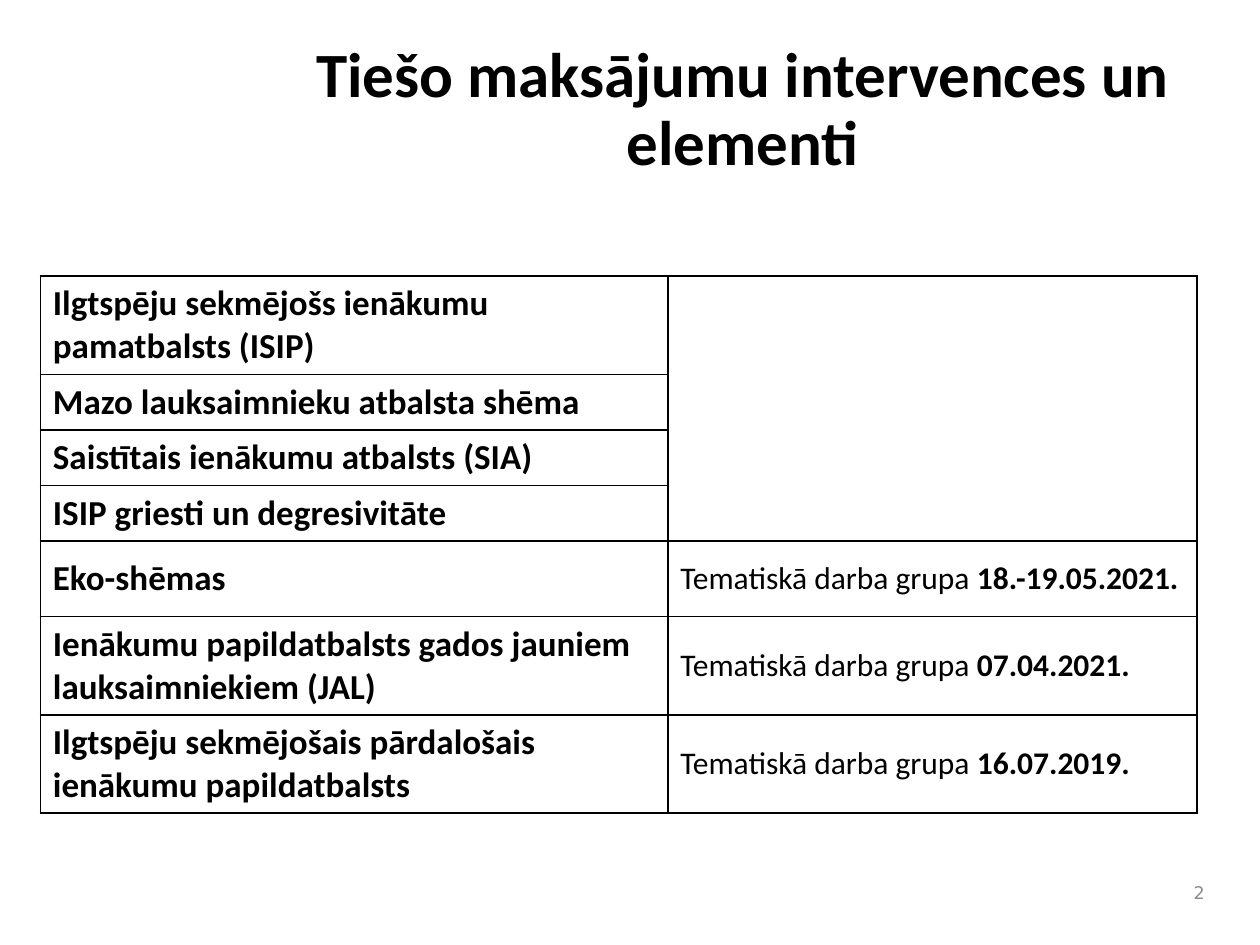
import pptx
import pptx.util
import pptx.dml.color
import pptx.enum.text
import pptx.oxml
import pptx.oxml.ns
from dataclasses import dataclass

Inches, Pt = pptx.util.Inches, pptx.util.Pt
ALIGN = pptx.enum.text.PP_ALIGN
MIDDLE = pptx.enum.text.MSO_ANCHOR.MIDDLE


@dataclass(frozen=True)
class Theme:
    """Colours, fonts and type sizes."""
    ink: str = "000000"
    muted: str = "8C8C8C"
    body: str = "Calibri"
    digit: str = "DejaVu Sans"
    head: int = 36
    label: int = 20
    note: int = 18
    page: int = 10
    rule: int = 1


class Deck:
    def __init__(self, theme):
        self.theme = theme
        self.file = pptx.Presentation()
        self.file.slide_width, self.file.slide_height = Inches(10), Inches(7.5)
        self.slide = self.file.slides.add_slide(self.file.slide_layouts[5])

    def words(self, para, text, color=None, **style):
        """Add one run, black body type unless told otherwise."""
        run = para.add_run()
        run.text = text
        for key, value in {"name": self.theme.body, "bold": False, **style}.items():
            setattr(run.font, key, value)
        run.font.color.rgb = pptx.dml.color.RGBColor.from_string(color or self.theme.ink)

    def frame(self, shape):
        """Prepare a wrapped, centred-height text frame."""
        frame = shape.text_frame
        fmt = {"word_wrap": True, "vertical_anchor": MIDDLE,
               "auto_size": pptx.enum.text.MSO_AUTO_SIZE.NONE}
        for key, value in fmt.items():
            setattr(frame, key, value)
        return frame.paragraphs[0]

    def title(self, text, *box):
        shape = self.slide.shapes.title
        for key, value in zip(("left", "top", "width", "height"), box):
            setattr(shape, key, Inches(value))
        para = self.frame(shape)
        para.alignment, para.line_spacing = ALIGN.CENTER, 0.9
        self.words(para, text, size=Pt(self.theme.head), bold=True)

    def number(self, text, *box):
        para = self.frame(self.slide.shapes.add_textbox(*map(Inches, box)))
        para.alignment = ALIGN.RIGHT
        self.words(para, text, self.theme.muted,
                   name=self.theme.digit, size=Pt(self.theme.page))

    def border(self, cell):
        """Draw a thin line on all four sides of a cell."""
        props = cell._tc.get_or_add_tcPr()
        for side in "LRTB":
            props.append(pptx.oxml.parse_xml(
                f'<a:ln{side} {pptx.oxml.ns.nsdecls("a")} w="{Pt(self.theme.rule)}">'
                f'<a:solidFill><a:srgbClr val="{self.theme.ink}"/></a:solidFill>'
                f'</a:ln{side}>'))

    def table(self, rows, cols, left, top):
        """Each row is (height, label, date); dates are optional."""
        high = sum(row[0] for row in rows)
        grid = self.slide.shapes.add_table(
            len(rows), len(cols), *map(Inches, (left, top, sum(cols), high))).table
        grid.first_row = grid.horz_banding = False
        for col, width in zip(grid.columns, cols):
            col.width = Inches(width)
        for line, (height, label, date) in zip(grid.rows, rows):
            line.height = Inches(height)
            for cell in line.cells:
                self.border(cell)
                cell.fill.background()
                cell.vertical_anchor = MIDDLE
            name, group = (cell.text_frame.paragraphs[0] for cell in line.cells)
            self.words(name, label, size=Pt(self.theme.label), bold=True)
            if date:
                size = Pt(self.theme.note)
                self.words(group, "Tematiskā darba grupa ", size=size)
                self.words(group, date, size=size, bold=True)
        return grid


def main():
    deck = Deck(Theme())

    # Heading
    deck.title("Tiešo maksājumu intervences un elementi", 2.29, 0.33, 7.21, 1.11)

    # Interventions and their working group dates
    rows = [
        (0.78, "Ilgtspēju sekmējošs ienākumu pamatbalsts (ISIP)", None),
        (0.44, "Mazo lauksaimnieku atbalsta shēma", None),
        (0.44, "Saistītais ienākumu atbalsts (SIA)", None),
        (0.44, "ISIP griesti un degresivitāte", None),
        (0.6, "Eko-shēmas", "18.-19.05.2021."),
        (0.78, "Ienākumu papildatbalsts gados jauniem lauksaimniekiem (JAL)", "07.04.2021."),
        (0.78, "Ilgtspēju sekmējošais pārdalošais ienākumu papildatbalsts", "16.07.2019."),
    ]
    grid = deck.table(rows, (4.98, 4.2), 0.32, 2.19)
    grid.cell(0, 1).merge(grid.cell(3, 1))

    # Page number
    deck.number("2", 9.33, 6.92, 0.33, 0.33)

    deck.file.save("out.pptx")


if __name__ == "__main__":
    main()
